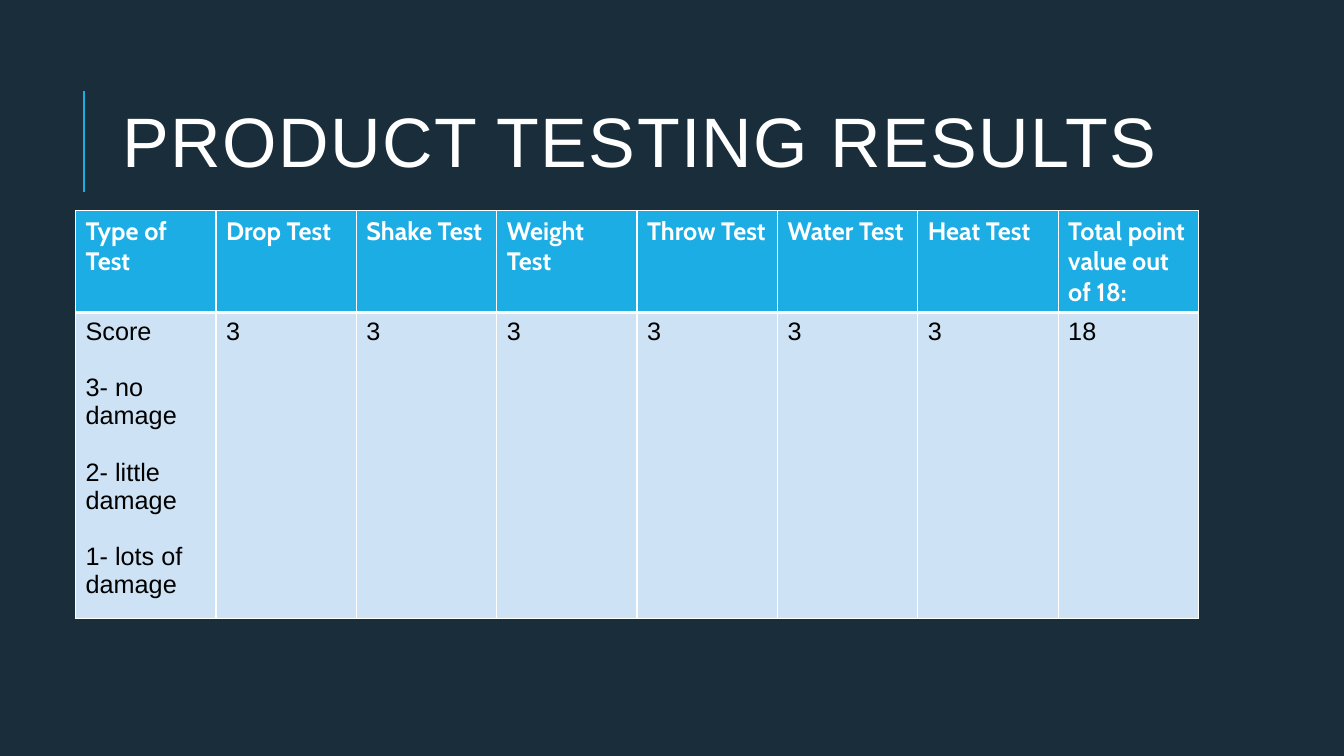
from lxml import etree
from pptx import Presentation
from pptx.dml.color import RGBColor
from pptx.enum.shapes import MSO_CONNECTOR
from pptx.enum.text import MSO_ANCHOR
from pptx.oxml.ns import qn
from pptx.util import Inches, Pt

ACCENT, WHITE = "1CADE4", "FFFFFF"


def color(hex_code):
    return RGBColor.from_string(hex_code)


def add_border(cell, side, points):
    border = etree.SubElement(cell._tc.get_or_add_tcPr(), qn(f"a:ln{side}"), w=str(Pt(points)))
    fill = etree.SubElement(border, qn("a:solidFill"))
    etree.SubElement(fill, qn("a:srgbClr"), val=WHITE)


prs = Presentation()
prs.slide_width, prs.slide_height = Inches(13.33), Inches(7.5)
slide = prs.slides.add_slide(prs.slide_layouts[6])
slide.background.fill.solid()
slide.background.fill.fore_color.rgb = color("1A2D3A")

# Accent line beside the title
accent = slide.shapes.add_connector(
    MSO_CONNECTOR.STRAIGHT, Inches(0.83), Inches(1.9), Inches(0.83), Inches(0.9))
accent.line.color.rgb = color(ACCENT)
accent.line.width = Pt(1.5)
etree.SubElement(accent._element.spPr, qn("a:effectLst"))

# Title
title = slide.shapes.add_textbox(Inches(1.12), Inches(0.64), Inches(10.63), Inches(1.64)).text_frame
title.word_wrap = True
title.vertical_anchor = MSO_ANCHOR.MIDDLE
heading = title.paragraphs[0]
heading.text = "PRODUCT TESTING RESULTS"
heading.line_spacing = 0.8
heading.font.name, heading.font.size = "Arial", Pt(50)
heading.font.color.rgb = color(WHITE)
heading.runs[0].font._element.set("spc", "100")

# Test results
tests = ["Drop Test", "Shake Test", "Weight Test", "Throw Test", "Water Test", "Heat Test"]
scores = [3] * len(tests)
score_key = "Score\n3- no damage\n2- little damage\n1- lots of damage"
rows = [
    ["Type of Test", *tests, "Total point value out of 18:"],
    [score_key, *map(str, scores), str(sum(scores))],
]
# Row height, fill, font, text colour, bold, top and bottom border
row_styles = [
    (1.01, ACCENT, "Cabin", WHITE, True, 1, 3),
    (2.9, "CDE3F5", "Arial", "000000", False, 3, 1),
]

results = slide.shapes.add_table(
    len(rows), len(rows[0]), Inches(0.75), Inches(2.09), Inches(11.14), Inches(3.91)).table
for r, (texts, style) in enumerate(zip(rows, row_styles)):
    height, fill, font, text_color, bold, top, bottom = style
    results.rows[r].height = Inches(height)
    for c, text in enumerate(texts):
        cell = results.cell(r, c)
        for side, points in (("L", 1), ("R", 1), ("T", top), ("B", bottom)):
            add_border(cell, side, points)
        cell.fill.solid()
        cell.fill.fore_color.rgb = color(fill)
        cell.text = text
        for i, paragraph in enumerate(cell.text_frame.paragraphs):
            paragraph.font.name, paragraph.font.size = font, Pt(18)
            paragraph.font.bold = bold
            paragraph.font.color.rgb = color(text_color)
            if i:
                paragraph.space_before = Pt(20)

prs.save("out.pptx")
